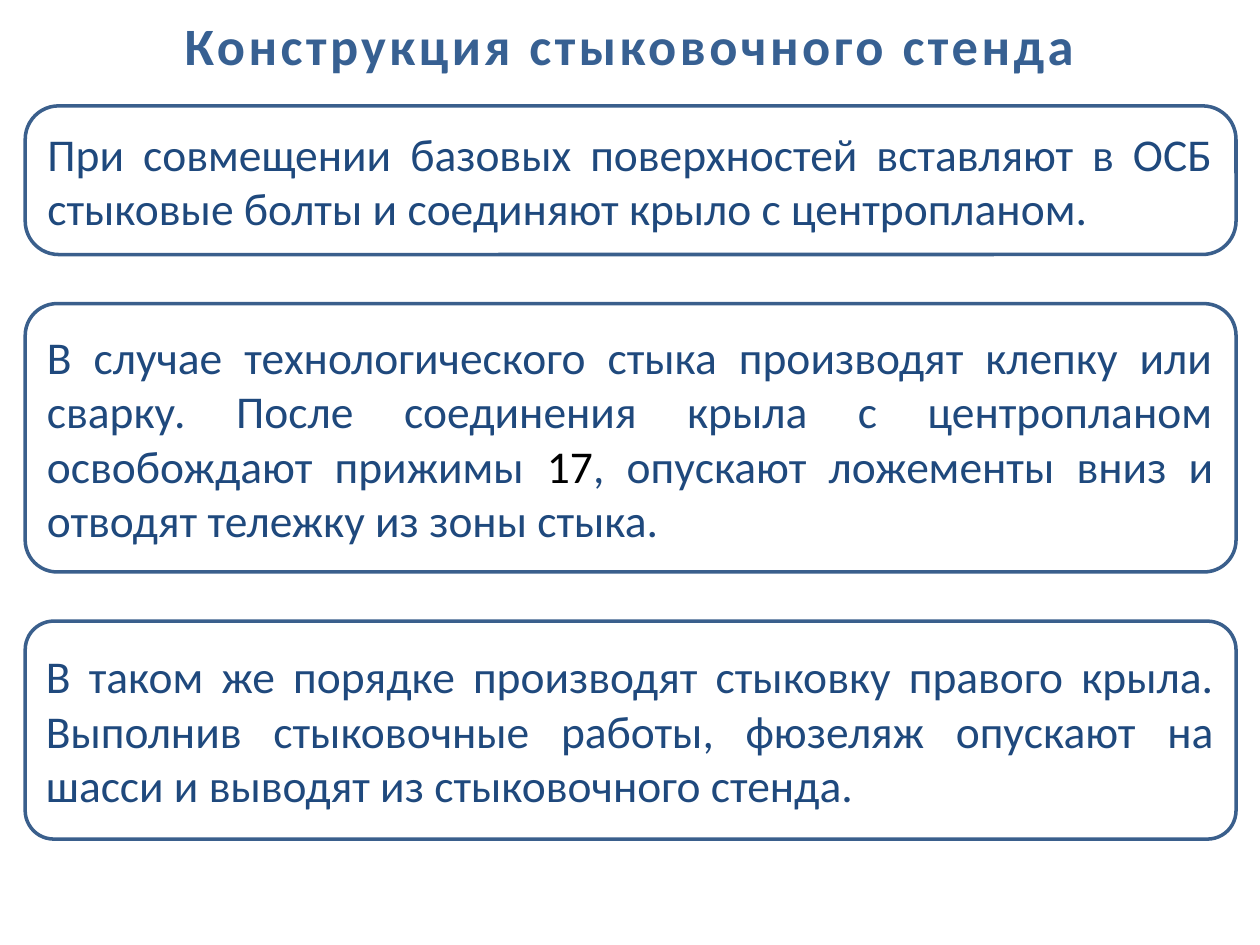
from dataclasses import dataclass

from pptx import Presentation
from pptx.dml.color import RGBColor
from pptx.enum.shapes import MSO_SHAPE as Shape
from pptx.enum.text import MSO_ANCHOR as Anchor, MSO_AUTO_SIZE as AutoSize, PP_ALIGN as Align
from pptx.slide import Slide
from pptx.util import Inches, Pt


@dataclass(frozen=True)
class Theme:
    font: str = "Calibri"
    title_size: Pt = Pt(30)
    body_size: Pt = Pt(26)
    title: RGBColor = RGBColor(0x37, 0x60, 0x92)
    body: RGBColor = RGBColor(0x1F, 0x49, 0x7D)
    accent: RGBColor = RGBColor(0, 0, 0)
    border: RGBColor = RGBColor(0x3A, 0x5F, 0x8C)


@dataclass(frozen=True)
class Step:
    """A framed paragraph; runs alternate between body and accent colour."""
    height: float
    rounding: float
    runs: tuple[str, ...]


THEME = Theme()
LEFT, TOP, WIDTH, GAP = 0.2, 0.84, 9.61, 0.39
STEPS = (
    Step(1.18, 0.225, (
        "При совмещении базовых поверхностей вставляют в ОСБ стыковые болты "
        "и соединяют крыло с центропланом.",)),
    Step(2.13, 0.119, (
        "В случае технологического стыка производят клепку или сварку. "
        "После соединения крыла с центропланом освобождают прижимы ",
        "17",
        ", опускают ложементы вниз и отводят тележку из зоны стыка.")),
    Step(1.73, 0.131, (
        "В таком же порядке производят стыковку правого крыла. "
        "Выполнив стыковочные работы, фюзеляж опускают на шасси "
        "и выводят из стыковочного стенда.",)),
)


def add_title(s: Slide, text: str) -> None:
    sp = s.shapes.title
    sp.left, sp.top, sp.width, sp.height = Inches(0), Inches(0.05), Inches(10), Inches(0.55)
    tf = sp.text_frame
    tf.auto_size = AutoSize.NONE
    tf.vertical_anchor = Anchor.TOP
    p = tf.paragraphs[0]
    p.alignment = Align.CENTER
    r = p.add_run()
    r.text = text
    r.font.name, r.font.size, r.font.bold = THEME.font, THEME.title_size, True
    r.font.color.rgb = THEME.title
    r.font._element.set("spc", "200")  # letter spacing, 2 pt


def add_step(s: Slide, step: Step, top: float) -> None:
    sp = s.shapes.add_shape(Shape.ROUNDED_RECTANGLE, Inches(LEFT), Inches(top),
                            Inches(WIDTH), Inches(step.height))
    sp.adjustments[0] = step.rounding
    sp.shadow.inherit = False
    sp.fill.background()
    sp.line.color.rgb = THEME.border
    sp.line.width = Pt(2)
    tf = sp.text_frame
    tf.word_wrap = True
    tf.vertical_anchor = Anchor.MIDDLE
    p = tf.paragraphs[0]
    p.alignment = Align.JUSTIFY
    p.space_after = Pt(6)
    p.font.name, p.font.size = THEME.font, THEME.body_size
    for i, text in enumerate(step.runs):
        r = p.add_run()
        r.text = text
        r.font.name, r.font.size = THEME.font, THEME.body_size
        r.font.color.rgb = THEME.accent if i % 2 else THEME.body


def main() -> None:
    prs = Presentation()
    prs.slide_width, prs.slide_height = Inches(10), Inches(7.5)
    s = prs.slides.add_slide(prs.slide_layouts[5])  # Title Only

    # Heading
    add_title(s, "Конструкция стыковочного стенда")

    # Framed steps, stacked with equal gaps
    top = TOP
    for step in STEPS:
        add_step(s, step, top)
        top += step.height + GAP

    prs.save("out.pptx")


if __name__ == "__main__":
    main()
